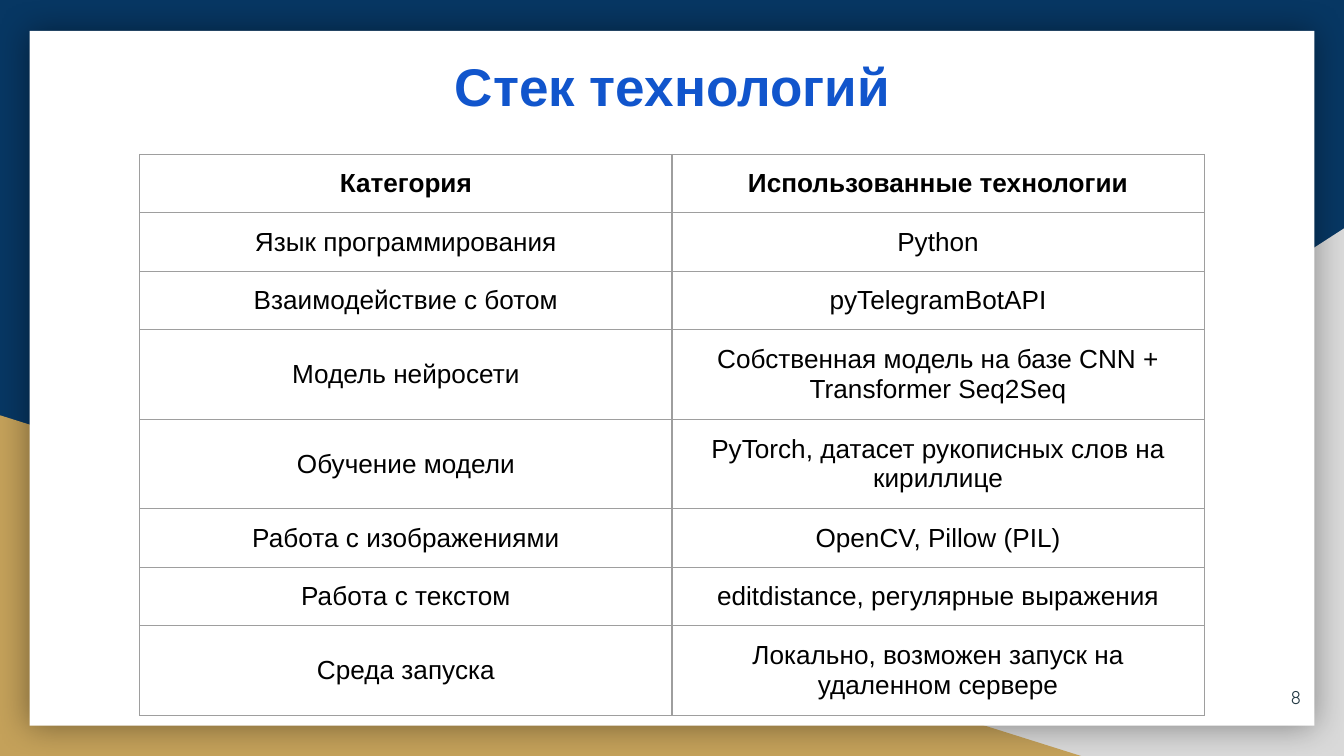
from lxml.etree import SubElement
from pptx import Presentation
from pptx.dml.color import RGBColor
from pptx.enum.shapes import MSO_SHAPE
from pptx.enum.text import MSO_ANCHOR, MSO_AUTO_SIZE, PP_ALIGN
from pptx.oxml import parse_xml
from pptx.oxml.ns import nsdecls, qn
from pptx.util import Inches, Pt

NAVY, GOLD, GREY, WHITE = "073763", "C4A15A", "D9D9D9", "FFFFFF"
BLUE, BLACK, SLATE, RULE = "1155CC", "000000", "233A44", "9E9E9E"

ROWS = [
    ("Категория", "Использованные технологии"),
    ("Язык программирования", "Python"),
    ("Взаимодействие с ботом", "pyTelegramBotAPI"),
    ("Модель нейросети", "Собственная модель на базе CNN + Transformer Seq2Seq"),
    ("Обучение модели", "PyTorch, датасет рукописных слов на кириллице"),
    ("Работа с изображениями", "OpenCV, Pillow (PIL)"),
    ("Работа с текстом", "editdistance, регулярные выражения"),
    ("Среда запуска", "Локально, возможен запуск на удаленном сервере"),
]
HEIGHTS = [0.42] * 4 + [0.48] + [0.42] * 3


def color(code):
    return RGBColor.from_string(code)


class Deck:
    font = "Arial"
    inset = Inches(0.1)

    def __init__(self, slide):
        self.slide = slide
        fill = slide.background.fill
        fill.solid()
        fill.fore_color.rgb = color(NAVY)

    def style(self, frame, size, tint, bold=False, align=PP_ALIGN.CENTER, font=None):
        for para in frame.paragraphs:
            para.alignment = align
            for run in para.runs:
                run.font.name = font or self.font
                run.font.size = Pt(size)
                run.font.bold = bold
                run.font.color.rgb = color(tint)

    def pad(self, box):
        box.margin_left = box.margin_right = self.inset
        box.margin_top = box.margin_bottom = self.inset

    def shape(self, kind, area, tint):
        item = self.slide.shapes.add_shape(kind, *map(Inches, area))
        item.shadow.inherit = False
        item.fill.solid()
        item.fill.fore_color.rgb = color(tint)
        item.line.fill.background()
        return item

    def panel(self, area):
        item = self.shape(MSO_SHAPE.RECTANGLE, area, WHITE)
        glow = SubElement(
            item._element.spPr.find(qn("a:effectLst")), qn("a:outerShdw"),
            blurRad=str(Pt(18)), dist="0", dir="0", algn="ctr", rotWithShape="0")
        tint = SubElement(glow, qn("a:srgbClr"), val=BLACK)
        SubElement(tint, qn("a:alpha"), val="40000")

    def title(self, text, area):
        item = self.slide.shapes.title
        item.left, item.top, item.width, item.height = map(Inches, area)
        frame = item.text_frame
        frame.text = text
        frame.auto_size = MSO_AUTO_SIZE.NONE
        frame.vertical_anchor = MSO_ANCHOR.TOP
        self.pad(frame)
        self.style(frame, 28.4, BLUE, bold=True)
        self.slide.shapes._spTree.append(item._element)

    def number(self, text, area):
        frame = self.slide.shapes.add_textbox(*map(Inches, area)).text_frame
        frame.text = text
        frame.word_wrap = True
        frame.vertical_anchor = MSO_ANCHOR.MIDDLE
        self.pad(frame)
        self.style(frame, 10, SLATE, align=PP_ALIGN.RIGHT, font="Quicksand")

    def border(self, cell):
        props = cell._tc.get_or_add_tcPr()
        for spot, side in enumerate(("lnL", "lnR", "lnT", "lnB")):
            props.insert(spot, parse_xml(
                f'<a:{side} {nsdecls("a")} w="{Pt(0.75)}"><a:solidFill>'
                f'<a:srgbClr val="{RULE}"/></a:solidFill></a:{side}>'))

    def table(self, rows, heights, width, area):
        item = self.slide.shapes.add_table(
            len(rows), len(rows[0]), *map(Inches, area))
        grid = item.table
        grid.first_row = grid.horz_banding = False
        for col in grid.columns:
            col.width = Inches(width)
        for i, row in enumerate(rows):
            grid.rows[i].height = Inches(heights[i])
            for j, text in enumerate(row):
                cell = grid.cell(i, j)
                cell.text_frame.text = text
                cell.vertical_anchor = MSO_ANCHOR.MIDDLE
                cell.fill.background()
                self.pad(cell)
                self.border(cell)
                self.style(cell.text_frame, 14, BLACK, bold=i == 0)
        item.width, item.height = map(Inches, area[2:])


def main():
    show = Presentation()
    show.slide_width = Inches(10)
    show.slide_height = show.slide_width * 9 // 16
    deck = Deck(show.slides.add_slide(show.slide_layouts[5]))
    wedge = deck.shape(MSO_SHAPE.RIGHT_TRIANGLE, (3.92, 1.7, 6.08, 3.93), GREY)
    wedge._element.spPr.xfrm.set("flipH", "1")
    deck.shape(MSO_SHAPE.RIGHT_TRIANGLE, (0, 3.09, 8.06, 2.54), GOLD)
    deck.panel((0.22, 0.23, 9.56, 5.17))
    deck.title("Стек технологий", (0.9, 0.3, 8.21, 0.84))
    deck.number("8", (9.18, 4.97, 0.6, 0.43))
    deck.table(ROWS, HEIGHTS, 3.96, (1.04, 1.15, 3.28, 3.28))
    show.save("out.pptx")


if __name__ == "__main__":
    main()
